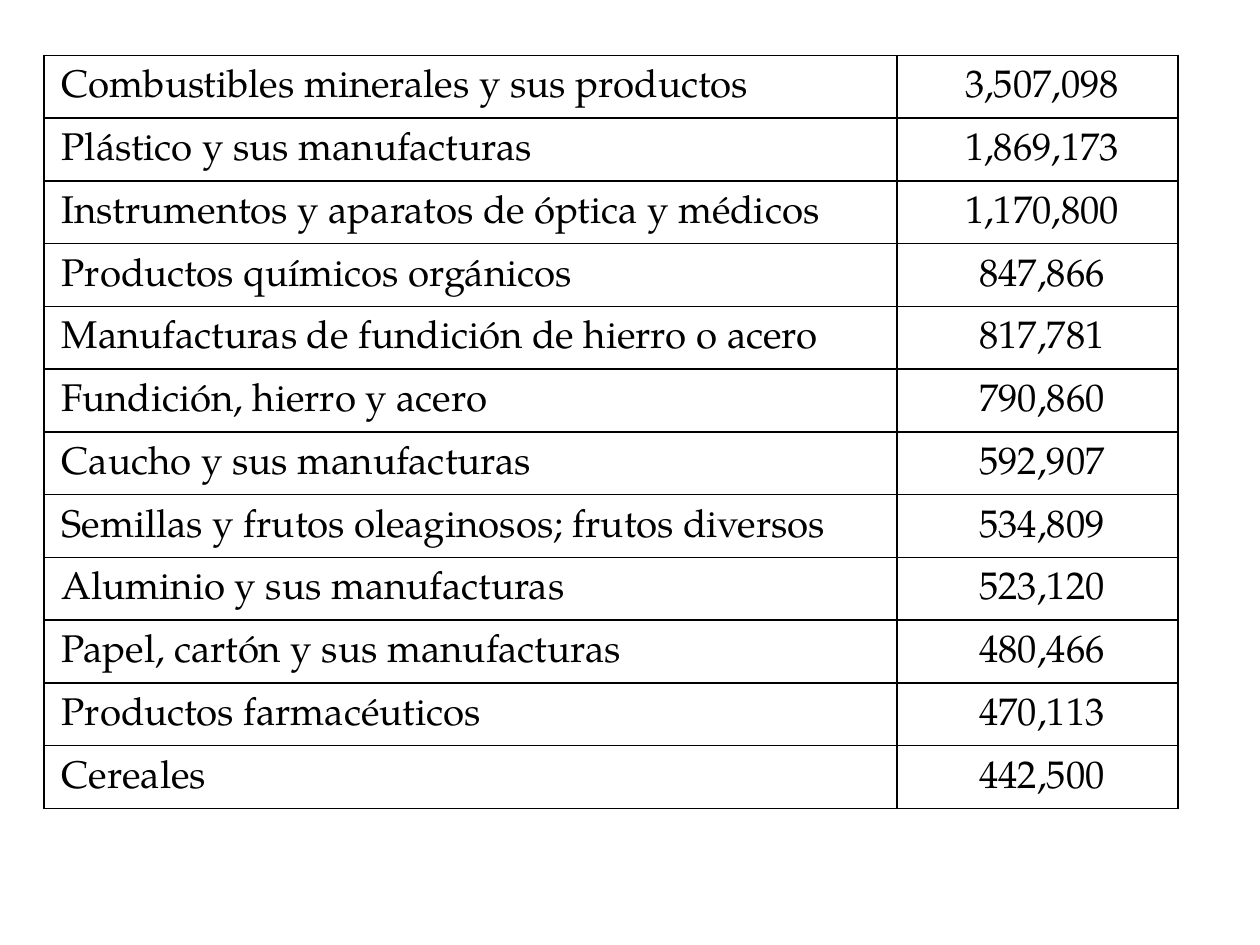
from lxml.etree import SubElement
from pptx import Presentation
from pptx.dml.color import RGBColor
from pptx.enum.text import MSO_ANCHOR as Anchor, PP_ALIGN as Align
from pptx.oxml.ns import qn
from pptx.util import Inches, Pt

BLACK = RGBColor(0x00, 0x00, 0x00)
FONT = "TeX Gyre Pagella"
INSET = Inches(0.07)

PRODUCTS = [
    ("Combustibles minerales y sus productos", 3507098),
    ("Plástico y sus manufacturas", 1869173),
    ("Instrumentos y aparatos de óptica y médicos", 1170800),
    ("Productos químicos orgánicos", 847866),
    ("Manufacturas de fundición de hierro o acero", 817781),
    ("Fundición, hierro y acero", 790860),
    ("Caucho y sus manufacturas", 592907),
    ("Semillas y frutos oleaginosos; frutos diversos", 534809),
    ("Aluminio y sus manufacturas", 523120),
    ("Papel, cartón y sus manufacturas", 480466),
    ("Productos farmacéuticos", 470113),
    ("Cereales", 442500),
]


def write_text(frame, text, size=22, color=BLACK, align=Align.JUSTIFY, spacing=1.15):
    para = frame.paragraphs[0]
    para.alignment = align
    para.line_spacing = spacing
    para._p.get_or_add_pPr().set("marL", str(INSET))
    span = para.add_run()
    span.text = text
    span.font.name = FONT
    span.font.size = Pt(size)
    span.font.color.rgb = color


def add_borders(cell, color=BLACK, width=1):
    properties = cell._tc.get_or_add_tcPr()
    for side in ("a:lnL", "a:lnR", "a:lnT", "a:lnB"):
        line = SubElement(properties, qn(side), w=str(Pt(width)))
        fill = SubElement(line, qn("a:solidFill"))
        SubElement(fill, qn("a:srgbClr"), val=str(color))


def format_cell(cell):
    cell.margin_left = cell.margin_right = INSET
    cell.margin_top = cell.margin_bottom = INSET
    cell.vertical_anchor = Anchor.TOP
    add_borders(cell)
    cell.fill.background()


def add_product_table(page, left, top, width, height):
    table = page.shapes.add_table(len(PRODUCTS), 2, left, top, width, height).table
    table.first_row = table.horz_banding = False

    # Wide column for names, the rest for amounts
    table.columns[0].width = Inches(6.77)
    table.columns[1].width = width - Inches(6.77)

    for row, (name, amount) in zip(table.rows, PRODUCTS):
        name_cell, amount_cell = row.cells
        write_text(name_cell.text_frame, name)
        write_text(amount_cell.text_frame, f"{amount:,}", align=Align.CENTER)
        for cell in (name_cell, amount_cell):
            format_cell(cell)


def main():
    deck = Presentation()
    deck.slide_width, deck.slide_height = Inches(10), Inches(7.5)
    page = deck.slides.add_slide(deck.slide_layouts[6])
    add_product_table(page, Inches(0.35), Inches(0.44), Inches(9), Inches(5.98))
    deck.save("out.pptx")


if __name__ == "__main__":
    main()
